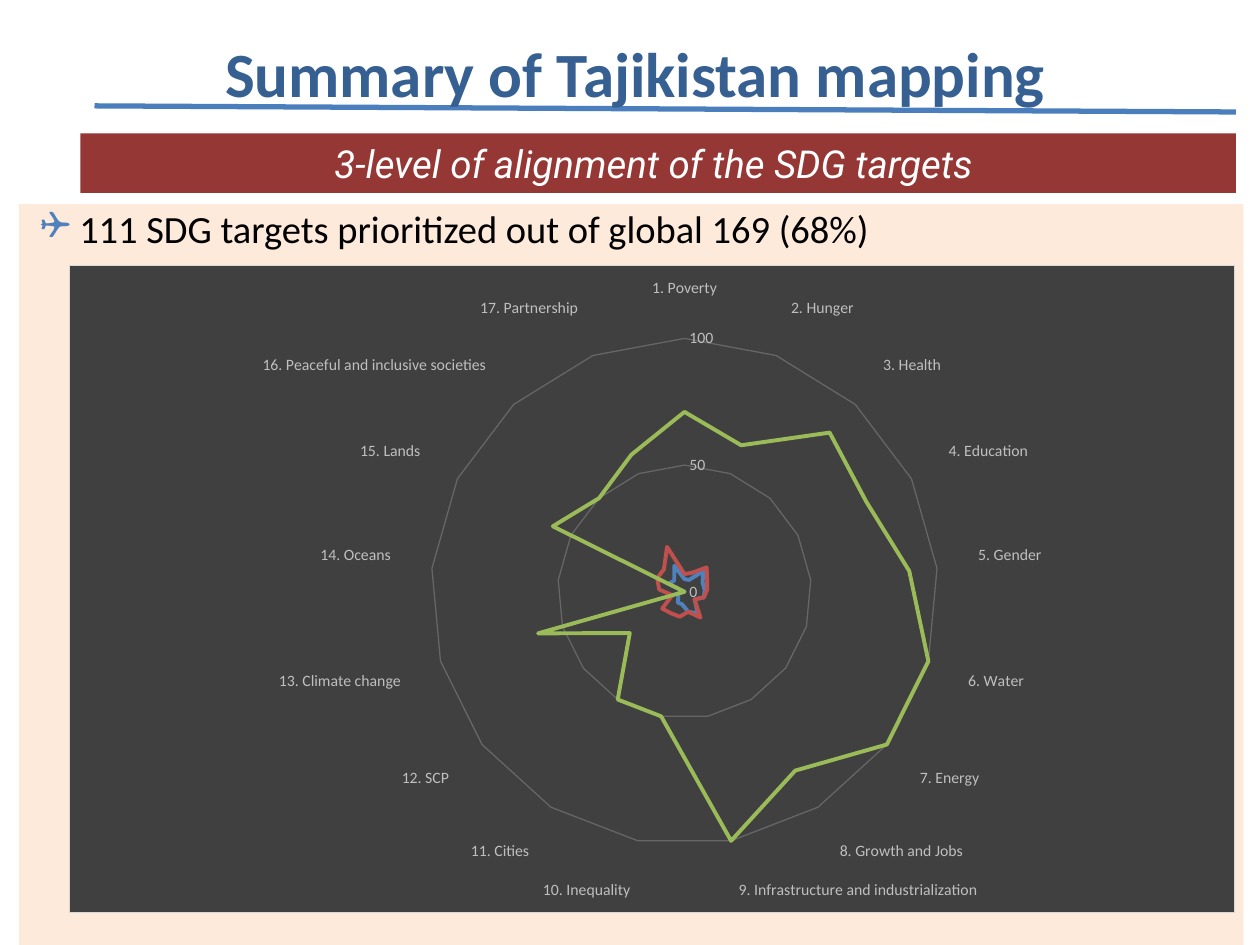
from lxml import etree
from pptx import Presentation
from pptx.chart.data import CategoryChartData
from pptx.dml.color import RGBColor
from pptx.enum.chart import XL_CHART_TYPE, XL_TICK_MARK
from pptx.enum.shapes import MSO_CONNECTOR, MSO_SHAPE
from pptx.enum.text import MSO_ANCHOR, MSO_AUTO_SIZE, PP_ALIGN
from pptx.oxml import parse_xml
from pptx.oxml.ns import nsdecls, qn
from pptx.util import Pt

RADAR = XL_CHART_TYPE.RADAR
NO_TICK = XL_TICK_MARK.NONE
STRAIGHT = MSO_CONNECTOR.STRAIGHT
RECT = MSO_SHAPE.RECTANGLE
TOP, MIDDLE = MSO_ANCHOR.TOP, MSO_ANCHOR.MIDDLE
FIT_SHAPE = MSO_AUTO_SIZE.SHAPE_TO_FIT_TEXT
LEFT, CENTER = PP_ALIGN.LEFT, PP_ALIGN.CENTER

COLORS = {
    "rule": "4B7EBC", "title": "376092", "banner": "953735", "panel": "FDEADA",
    "white": "FFFFFF", "black": "000000", "bullet": "4F81BD",
    "chart": "404040", "border": "D9D9D9", "label": "BFBFBF",
    "blue": "4F81BD", "red": "C0504D", "green": "9BBB59",
}

GOALS = [
    "Poverty", "Hunger", "Health", "Education", "Gender", "Water", "Energy",
    "Growth and Jobs", "Infrastructure and industrialization", "Inequality",
    "Cities", "SCP", "Climate change", "Oceans", "Lands",
    "Peaceful and inclusive societies", "Partnership",
]
SERIES = [
    ("Series 1", "blue", [5, 5, 11, 8, 8, 8, 5, 10, 8, 5, 5, 3, 3, 0, 7, 6, 11]),
    ("Series 2", "red", [7, 8, 13, 10, 9, 8, 5, 12, 8, 10, 10, 11, 5, 10, 12, 12, 19]),
    ("Series 3", "green", [71, 62, 85, 80, 89, 100, 100, 83, 100, 50, 50, 27, 60, 0, 58, 50, 58]),
]


def rgb(name):
    return RGBColor.from_string(COLORS[name])


def style_font(font, size, color, name="Calibri", bold=False, italic=False):
    font.size, font.name = Pt(size), name
    font.bold, font.italic = bold, italic
    font.color.rgb = rgb(color)


def write_text(tf, text, align=LEFT, anchor=MIDDLE, **font):
    tf.word_wrap = True
    tf.vertical_anchor = anchor
    p = tf.paragraphs[0]
    p.alignment = align
    r = p.add_run()
    r.text = text
    style_font(r.font, **font)
    return p


class SlideBuilder:
    font = "Calibri"
    grid_width = 0.75
    series_width = 2.25

    def __init__(self, slide):
        self.s = slide

    def line(self, x1, y1, x2, y2, color, width):
        sp = self.s.shapes.add_connector(STRAIGHT, Pt(x1), Pt(y1), Pt(x2), Pt(y2))
        sp.line.color.rgb = rgb(color)
        sp.line.width = Pt(width)
        etree.SubElement(sp._element.spPr, qn("a:effectLst"))

    def text(self, x, y, w, h, text, **style):
        sp = self.s.shapes.add_textbox(Pt(x), Pt(y), Pt(w), Pt(h))
        return write_text(sp.text_frame, text, **style)

    def box(self, x, y, w, h, fill):
        sp = self.s.shapes.add_shape(RECT, Pt(x), Pt(y), Pt(w), Pt(h))
        sp.shadow.inherit = False
        sp.fill.solid()
        sp.fill.fore_color.rgb = rgb(fill)
        sp.line.fill.background()
        return sp.text_frame

    def bullet(self, p, char, color, margin, indent):
        pPr = p._p.get_or_add_pPr()
        pPr.set("marL", str(Pt(margin)))
        pPr.set("indent", str(Pt(indent)))
        clr = etree.SubElement(pPr, qn("a:buClr"))
        etree.SubElement(clr, qn("a:srgbClr"), val=COLORS[color])
        etree.SubElement(pPr, qn("a:buFont"), typeface="Wingdings")
        etree.SubElement(pPr, qn("a:buChar"), char=char)

    def axis(self, axis):
        axis.major_tick_mark = axis.minor_tick_mark = NO_TICK
        axis.format.line.fill.background()
        style_font(axis.tick_labels.font, 9, "label", self.font)
        axis.has_major_gridlines = True
        grid = axis.major_gridlines.format.line
        grid.color.rgb = rgb("white")
        grid.width = Pt(self.grid_width)
        for clr in axis._element.find(qn("c:majorGridlines")).iter(qn("a:srgbClr")):
            etree.SubElement(clr, qn("a:alpha"), val="20000")

    def radar(self, x, y, w, h, categories, series):
        data = CategoryChartData()
        data.categories = categories
        for name, _, values in series:
            data.add_series(name, values)
        chart = self.s.shapes.add_chart(RADAR, Pt(x), Pt(y), Pt(w), Pt(h), data).chart
        chart.has_legend = chart.has_title = False
        style_font(chart.font, 10, "black", self.font)
        self.axis(chart.category_axis)
        self.axis(chart.value_axis)
        chart.value_axis.minimum_scale = 0
        chart.value_axis.maximum_scale = 100
        chart.value_axis.major_unit = 50
        for ser, (_, color, _) in zip(chart.plots[0].series, series):
            ser.smooth = False
            ser.format.line.color.rgb = rgb(color)
            ser.format.line.width = Pt(self.series_width)
        self.chart_area(chart)

    def chart_area(self, chart):
        spPr = parse_xml(
            f'<c:spPr {nsdecls("c", "a")}>'
            f'<a:solidFill><a:srgbClr val="{COLORS["chart"]}"/></a:solidFill>'
            f'<a:ln w="{Pt(self.grid_width)}"><a:solidFill>'
            f'<a:srgbClr val="{COLORS["border"]}"/></a:solidFill></a:ln></c:spPr>')
        chart.element.find(qn("c:chart")).addnext(spPr)


def main():
    prs = Presentation()
    prs.slide_width, prs.slide_height = Pt(720), Pt(540)
    s = SlideBuilder(prs.slides.add_slide(prs.slide_layouts[6]))

    s.line(54, 60.5, 706.3, 64, "rule", 3)
    s.text(69, 18.7, 588.2, 45.4, "Summary of Tajikistan mapping",
           align=CENTER, size=36, color="title", bold=True)

    banner = s.box(46, 76.3, 660.3, 33.9, "banner")
    write_text(banner, "3-level of alignment of the SDG targets ", align=CENTER,
               size=22, color="white", name="Roboto", italic=True)
    banner.auto_size = FIT_SHAPE

    panel = s.box(10.8, 116.6, 699.8, 435.6, "panel")
    p = write_text(panel, "111 SDG targets prioritized out of global 169 (68%)",
                   anchor=TOP, size=22, color="black")
    p.line_spacing = 0.9
    p.space_before, p.space_after = Pt(12), Pt(2)
    s.bullet(p, "❑", "bullet", 27.4, -22.3)

    goals = [f"{i}. {goal}" for i, goal in enumerate(GOALS, 1)]
    s.radar(39.2, 151.5, 666.7, 370.5, goals, SERIES)
    prs.save("out.pptx")


if __name__ == "__main__":
    main()
